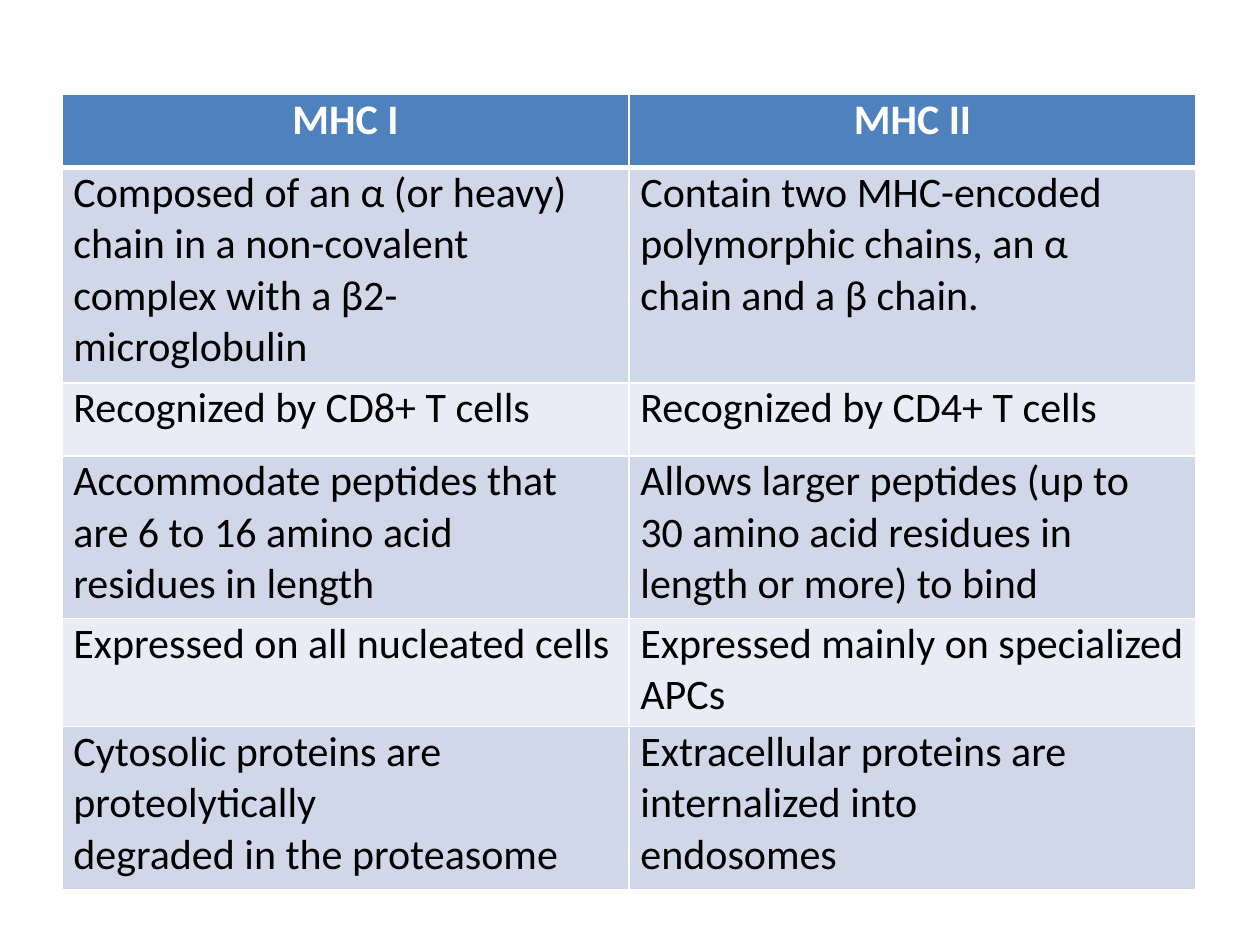
import dataclasses

import pptx
import pptx.dml.color
import pptx.enum.text
import pptx.oxml.ns
import pptx.util
from lxml import etree

Cm = pptx.util.Cm
Pt = pptx.util.Pt
Align = pptx.enum.text.PP_ALIGN


@dataclasses.dataclass(frozen=True)
class Theme:
    font: str = "Calibri"
    text_size: int = 24
    header_fill: str = "4F81BC"
    header_text: str = "FFFFFF"
    body_text: str = "000000"
    bands: tuple = ("D0D7E8", "E9ECF4")
    border: str = "FFFFFF"
    thin: int = 1
    thick: int = 3


THEME = Theme()

HEADERS = ("MHC I", "MHC II")

# Row height in cm, right margin in cm, one text for each class
COMPARISON = (
    (4.34, 0.93,
     "Composed of an α (or heavy) chain in a non-covalent complex with a β2- microglobulin",
     "Contain two MHC-encoded polymorphic chains, an α chain and a β chain."),
    (1.47, 0, "Recognized by CD8+ T cells", "Recognized by CD4+ T cells"),
    (3.28, 0.93,
     "Accommodate peptides that are 6 to 16 amino acid residues in length",
     "Allows larger peptides (up to 30 amino acid residues in length or more) to bind"),
    (2.18, 0, "Expressed on all nucleated cells", "Expressed mainly on specialized APCs"),
    (3.28, 0.93,
     "Cytosolic proteins are proteolytically\ndegraded in the proteasome",
     "Extracellular proteins are internalized into\nendosomes"),
)
HEADER_HEIGHT = 1.47


def write_text(frame, text, *, color, bold=False, align=Align.LEFT):
    """Fill a text frame, one paragraph for each line of text."""
    for index, line in enumerate(text.split("\n")):
        paragraph = frame.add_paragraph() if index else frame.paragraphs[0]
        paragraph.alignment = align
        run = paragraph.add_run()
        run.text = line
        run.font.name = THEME.font
        run.font.size = Pt(THEME.text_size)
        run.font.bold = bold
        run.font.color.rgb = pptx.dml.color.RGBColor.from_string(color)


def set_borders(cell, *, top, bottom):
    """Draw the four cell borders; widths are in points."""
    properties = cell._tc.get_or_add_tcPr()
    widths = {"lnL": THEME.thin, "lnR": THEME.thin, "lnT": top, "lnB": bottom}
    for side, width in widths.items():
        line = etree.SubElement(properties, pptx.oxml.ns.qn(f"a:{side}"), w=str(Pt(width)))
        fill = etree.SubElement(line, pptx.oxml.ns.qn("a:solidFill"))
        etree.SubElement(fill, pptx.oxml.ns.qn("a:srgbClr"), val=THEME.border)


def format_cell(cell, *, fill, left=0, right=0, top=THEME.thin, bottom=THEME.thin):
    cell.margin_top = cell.margin_bottom = 0
    cell.margin_left, cell.margin_right = Cm(left), Cm(right)
    set_borders(cell, top=top, bottom=bottom)
    cell.fill.solid()
    cell.fill.fore_color.rgb = pptx.dml.color.RGBColor.from_string(fill)


def add_comparison_table(slide, left, top, width):
    """Place the two-column comparison in a box; lengths are in cm."""
    heights = [HEADER_HEIGHT] + [row[0] for row in COMPARISON]
    table = slide.shapes.add_table(
        len(heights), len(HEADERS), Cm(left), Cm(top), Cm(width), Cm(sum(heights))
    ).table
    table.horz_banding = False
    for column in table.columns:
        column.width = Cm(width / len(HEADERS))
    for row, height in zip(table.rows, heights):
        row.height = Cm(height)

    # Header row
    for column, title in enumerate(HEADERS):
        cell = table.cell(0, column)
        format_cell(cell, fill=THEME.header_fill, bottom=THEME.thick)
        write_text(cell.text_frame, title, color=THEME.header_text,
                   bold=True, align=Align.CENTER)

    # Banded body rows
    for index, (_, right, *texts) in enumerate(COMPARISON):
        for column, text in enumerate(texts):
            cell = table.cell(index + 1, column)
            format_cell(cell, fill=THEME.bands[index % 2], left=0.23, right=right,
                        top=THEME.thin if index else THEME.thick)
            write_text(cell.text_frame, text, color=THEME.body_text)


def main():
    presentation = pptx.Presentation()
    presentation.slide_width, presentation.slide_height = Cm(25.4), Cm(19.05)
    slide = presentation.slides.add_slide(presentation.slide_layouts[6])
    add_comparison_table(slide, left=1.25, top=1.91, width=22.86)
    presentation.save("out.pptx")


if __name__ == "__main__":
    main()
